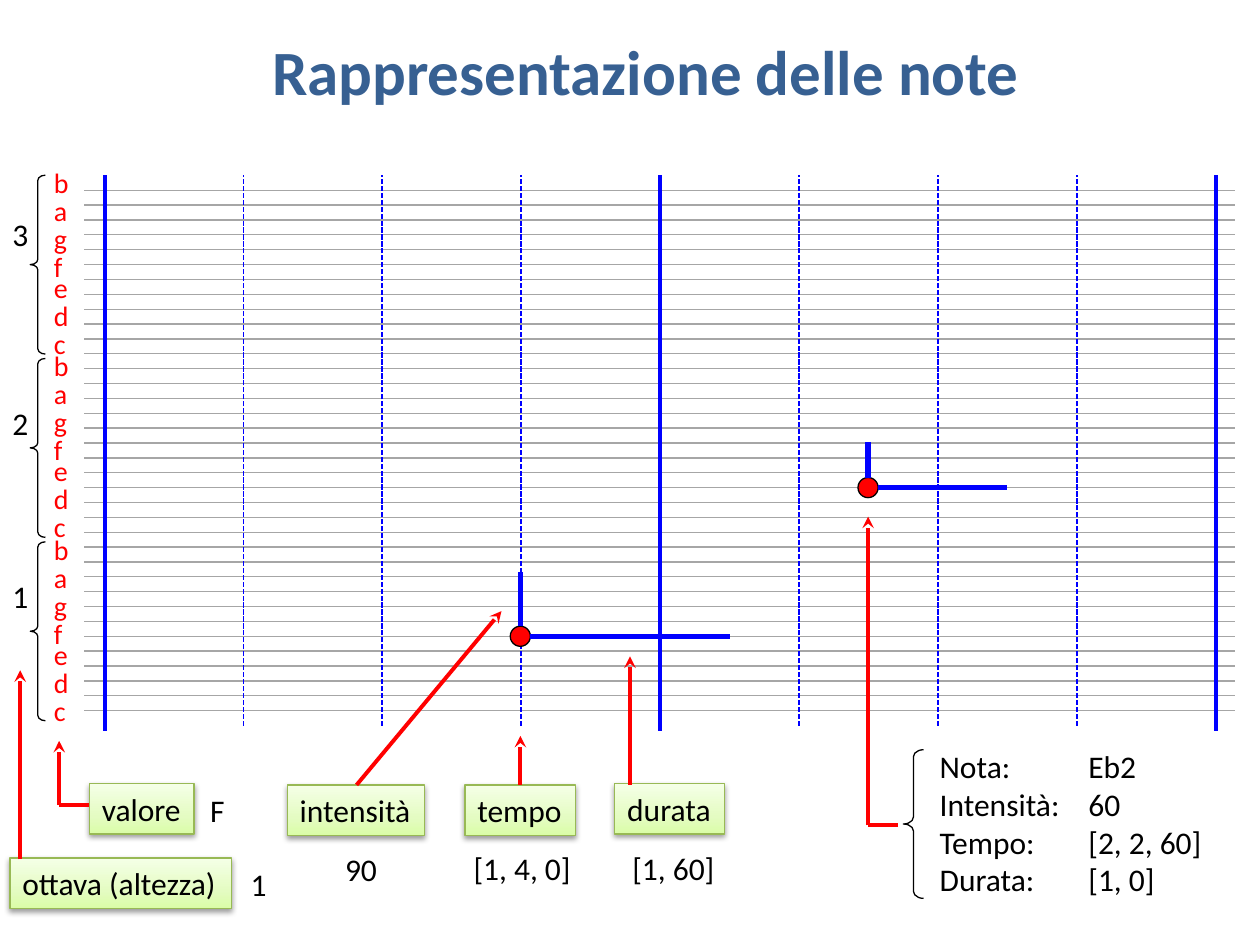
import copy
from dataclasses import dataclass

import pptx
import pptx.util
import pptx.dml.color
import pptx.enum.dml
import pptx.enum.shapes
import pptx.enum.text
import pptx.oxml
import pptx.oxml.ns

Inches, Pt = pptx.util.Inches, pptx.util.Pt
Rgb = pptx.dml.color.RGBColor.from_string
Kind = pptx.enum.shapes.MSO_SHAPE
Size = pptx.enum.text.MSO_AUTO_SIZE
qn = pptx.oxml.ns.qn
NS = pptx.oxml.ns.nsdecls("a")


@dataclass(frozen=True)
class Theme:
    font: str = "Calibri"
    title: str = "376092"
    black: str = "000000"
    grid: str = "A6A6A6"
    blue: str = "0000FF"
    red: str = "FF0000"
    edge: str = "98B955"
    fade: tuple = ((0, "DAFDA7"), (0.35, "E4FCC2"), (1, "F5FFE7"))
    head: int = 36
    body: int = 18
    pitch: int = 16
    thin: float = 0.75
    dash: float = 1
    bold: float = 2.25
    thick: float = 3


T = Theme()


@dataclass(frozen=True)
class Box:
    text: str
    x: float
    y: float
    w: float
    h: float = 0.4
    wrap: bool = True


@dataclass(frozen=True)
class Note:
    x: float
    y: float
    stem: float
    end: float


LABELS = [
    Box("3", 0, 1.66, 0.33, wrap=False),
    Box("2", 0, 3.16, 0.33, wrap=False),
    Box("1", 0, 4.53, 0.33, wrap=False),
    Box("[1, 4, 0]", 3.66, 6.69, 0.98),
    Box("[1, 60]", 4.92, 6.69, 0.87),
    Box("F", 1.57, 6.23, 0.35),
    Box("90", 2.64, 6.7, 0.47),
    Box("1", 1.89, 6.82, 0.35),
]
TAGS = [
    Box("ottava (altezza)", 0.08, 6.81, 1.76, wrap=False),
    Box("valore", 0.71, 6.22, 0.83, wrap=False),
    Box("tempo", 3.69, 6.23, 0.88, wrap=False),
    Box("durata", 4.88, 6.22, 0.87, wrap=False),
    Box("intensità", 2.28, 6.23, 1.09, wrap=False),
]
FACTS = Box("Nota:\tEb2\nIntensità:\t60\nTempo:\t[2, 2, 60]\nDurata:\t[1, 0]",
            7.36, 5.88, 2.36, 1.31)
NOTES = [Note(4.13, 5.05, 4.54, 5.79), Note(6.89, 3.87, 3.51, 7.99)]
ARROWS = [
    (0.16, 6.82, 0.16, 5.32),
    (0.47, 6.39, 0.47, 5.88),
    (4.13, 6.23, 4.13, 5.84),
    (5, 6.23, 5, 5.21),
    (2.83, 6.23, 3.98, 4.85),
    (6.89, 6.55, 6.89, 4.1),
]
ELBOWS = [(0.47, 6.39, 0.71, 6.39), (6.89, 6.55, 7.13, 6.55)]


def put(obj, **form) -> None:
    """Set each format value on the object."""
    for name, val in form.items():
        setattr(obj, name, val)


def write(shape, text: str, size: int = T.body, color: str = T.black,
          wrap: bool = True, bold: bool = False, align: str = "LEFT") -> None:
    frame = shape.text_frame
    frame.text = text
    put(frame, word_wrap=wrap, auto_size=Size.SHAPE_TO_FIT_TEXT,
        vertical_anchor=pptx.enum.text.MSO_ANCHOR.TOP)
    for para in frame.paragraphs:
        para.alignment = pptx.enum.text.PP_ALIGN[align]
        for run in para.runs:
            put(run.font, name=T.font, size=Pt(size), bold=bold)
            run.font.color.rgb = Rgb(color)


def label(slide, box: Box, **form):
    shape = slide.shapes.add_textbox(*map(Inches, (box.x, box.y, box.w, box.h)))
    write(shape, box.text, wrap=box.wrap, **form)
    return shape


def line(slide, ends: tuple, color: str, width: float,
         dash: bool = False, arrow: bool = False) -> None:
    link = slide.shapes.add_connector(
        pptx.enum.shapes.MSO_CONNECTOR.STRAIGHT, *map(Inches, ends))
    link.line.color.rgb = Rgb(color)
    link.line.width = Pt(width)
    if dash:
        link.line.dash_style = pptx.enum.dml.MSO_LINE.SQUARE_DOT
    props = link._element.spPr
    if arrow:
        props.find(qn("a:ln")).append(
            pptx.oxml.parse_xml(f'<a:tailEnd {NS} type="stealth"/>'))
    props.append(pptx.oxml.parse_xml(f"<a:effectLst {NS}/>"))


def shape(slide, kind, x: float, y: float, w: float, h: float,
          fill: str = "", edge: str = T.black):
    form = slide.shapes.add_shape(kind, *map(Inches, (x, y, w, h)))
    form.shadow.inherit = False
    if fill:
        form.fill.solid()
        form.fill.fore_color.rgb = Rgb(fill)
    else:
        form.fill.background()
    form.line.color.rgb = Rgb(edge)
    form.line.width = Pt(T.thin)
    return form


def brace(slide, x: float, y: float, w: float, h: float) -> None:
    shape(slide, Kind.LEFT_BRACE, x, y, w, h).adjustments[0] = 0.348


def tag(slide, box: Box) -> None:
    form = shape(slide, Kind.RECTANGLE, box.x, box.y, box.w, box.h, edge=T.edge)
    form.fill.gradient()
    form.fill.gradient_angle = 90
    props = form._element.spPr
    stop = props.find(".//" + qn("a:gs"))
    stop.addnext(copy.deepcopy(stop))
    for stop, (place, color) in zip(form.fill.gradient_stops, T.fade):
        stop.position = place
        stop.color.rgb = Rgb(color)
    props.find(qn("a:effectLst")).append(pptx.oxml.parse_xml(
        f'<a:outerShdw {NS} blurRad="40000" dist="20000" dir="5400000" rotWithShape="0">'
        f'<a:srgbClr val="{T.black}"><a:alpha val="38000"/></a:srgbClr></a:outerShdw>'))
    write(form, box.text, wrap=box.wrap)


def main() -> None:
    deck = pptx.Presentation()
    put(deck, slide_width=Inches(10), slide_height=Inches(7.5))
    slide = deck.slides.add_slide(deck.slide_layouts[5])

    # Title
    title = slide.shapes.title
    put(title, left=Inches(1), top=Inches(0.21),
        width=Inches(8.25), height=Inches(0.71))
    write(title, "Rappresentazione delle note", T.head, T.title,
          bold=True, align="CENTER")

    # Pitch rows, then bars and beats
    for row in range(36):
        y = 1.51 + row * 4.13 / 35
        line(slide, (0.67, y, 9.8, y), T.grid, T.thin)
    for beat in range(9):
        x = 0.83 + beat * 8.82 / 8
        bar = beat % 4 == 0
        line(slide, (x, 5.8 if bar else 5.76, x, 1.39), T.blue,
             T.bold if bar else T.dash, dash=not bar)

    # Octaves with their pitch names
    for step in range(3):
        drop = step * 1.455
        names = label(slide, Box("b\na\ng\nf\ne\nd\nc", 0.33, 1.31 + drop, 0.32, 1.62),
                      size=T.pitch, color=T.red)
        for para in names.text_frame.paragraphs:
            para.line_spacing = Pt(12 if para.text == "e" else 16)
        brace(slide, 0.24, 1.39 + drop, 0.12, 1.42)

    # Notes: head, loudness stem, length
    for note in NOTES:
        rad = 0.08
        shape(slide, Kind.OVAL, note.x - rad, note.y - rad, 2 * rad, 2 * rad, T.red)
        line(slide, (note.x, note.y - rad, note.x, note.stem), T.blue, T.thick)
        line(slide, (note.x + rad, note.y, note.end, note.y), T.blue, T.thick)

    # Tags, values and pointers
    for box in TAGS:
        tag(slide, box)
    for box in LABELS:
        label(slide, box)
    for ends in ARROWS:
        line(slide, ends, T.red, T.bold, arrow=True)
    for ends in ELBOWS:
        line(slide, ends, T.red, T.bold)

    # Facts on the second note
    facts = label(slide, FACTS)
    for para in facts.text_frame.paragraphs:
        para._p.get_or_add_pPr().append(pptx.oxml.parse_xml(
            f'<a:tabLst {NS}><a:tab pos="{Inches(1.18)}" algn="l"/></a:tabLst>'))
    brace(slide, 7.17, 5.95, 0.16, 1.18)

    deck.save("out.pptx")


if __name__ == "__main__":
    main()
